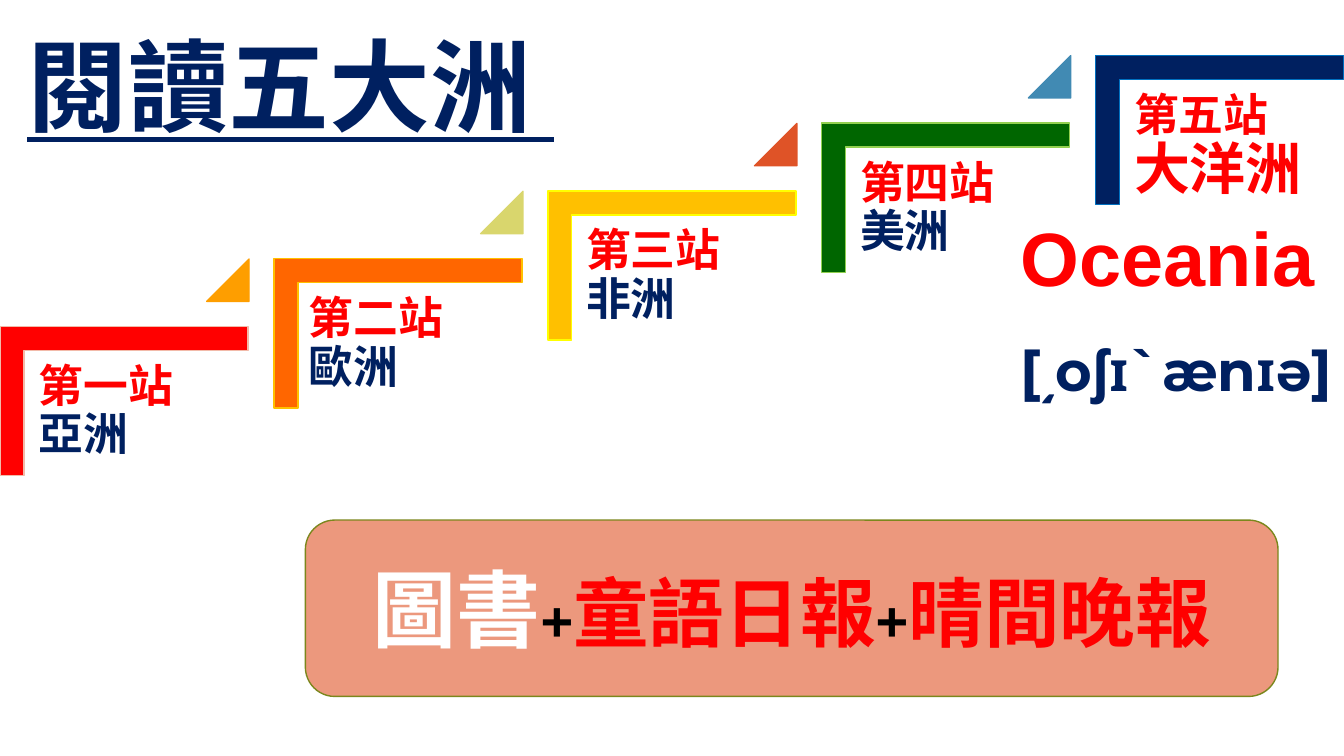
from dataclasses import dataclass

from lxml import etree
from pptx import Presentation
from pptx import util as u
from pptx.dml.color import RGBColor
from pptx.enum import shapes, text
from pptx.oxml import ns


@dataclass(frozen=True)
class Theme:
    navy: str = "002060"
    red: str = "FF0000"
    white: str = "FFFFFF"
    black: str = "000000"
    banner: str = "EC987D"
    banner_line: str = "7B871D"
    cjk: str = "Noto Sans CJK SC"
    latin: str = "Arial"
    phonetic: str = "Montserrat"
    title: int = 72
    banner_lead: int = 60
    headline: int = 54
    large: int = 40
    label: int = 32


@dataclass(frozen=True)
class Box:
    """A frame in percent of the slide's width and height."""
    left: float
    top: float
    width: float
    height: float

    def moved(self, across: float, down: float) -> "Box":
        return Box(self.left + across, self.top + down, self.width, self.height)

    def frame(self) -> tuple[int, int, int, int]:
        return (int(WIDTH * self.left / 100), int(HEIGHT * self.top / 100),
                int(WIDTH * self.width / 100), int(HEIGHT * self.height / 100))


@dataclass(frozen=True)
class Piece:
    words: str
    size: int
    color: str
    font: str
    underline: bool = False


@dataclass(frozen=True)
class Station:
    number: str
    continent: str
    fill: str
    line: str
    flag: str | None
    size: int
    color: str
    nudge: float = 0


THEME = Theme()
WIDTH, HEIGHT = u.Inches(13.33), u.Inches(7.5)

# Staircase: the first step's frames and the move to each next step
STEP_ACROSS, STEP_DOWN = 20.38, -8.97
CORNER = Box(3.68, 36.67, 11.1, 32.8)
LABEL = Box(1.88, 46.4, 16.65, 25.87)
FLAG = Box(15.38, 34.27, 3.15, 5.6)
CORNER_THICKNESS = 0.16

TITLE = Box(1.28, 4.4, 40.95, 21.2)
BANNER = Box(22.72, 68.8, 72.37, 23.33)
OCEANIA = Box(75.22, 30.27, 24.82, 22.93)

STATIONS = [
    Station("第一站", "亞洲", "FF0000", "F2BAA9", "FE9E00", THEME.label, THEME.navy),
    Station("第二站", "歐洲", "FF6600", "FFC000", "D9D66D", THEME.label, THEME.navy, -0.28),
    Station("第三站", "非洲", "FFC000", "FFFF00", "DF5327", THEME.label, THEME.navy),
    Station("第四站", "美洲", "006600", "92D050", "418AB3", THEME.label, THEME.navy),
    Station("第五站", "大洋洲", "002060", "0070C0", None, THEME.large, THEME.red),
]


def add_piece(paragraph, piece: Piece) -> None:
    run = paragraph.add_run()
    run.text = piece.words
    font = run.font
    font.size, font.bold, font.name = u.Pt(piece.size), True, piece.font
    font.color.rgb = RGBColor.from_string(piece.color)
    if piece.underline:
        font.underline = True
    latin = run._r.get_or_add_rPr().find(ns.qn("a:latin"))
    east_asian = etree.Element(ns.qn("a:ea"), typeface=THEME.cjk)
    latin.addnext(east_asian)


def add_preset(slide, kind, box: Box, fill: str, line: str):
    shape = slide.shapes.add_shape(kind, *box.frame())
    shape.shadow.inherit = False
    shape.fill.solid()
    shape.fill.fore_color.rgb = RGBColor.from_string(fill)
    shape.line.color.rgb = RGBColor.from_string(line)
    shape.line.width = u.Pt(1)
    return shape


def add_text_box(slide, box: Box):
    frame = slide.shapes.add_textbox(*box.frame()).text_frame
    frame.word_wrap = True
    return frame


def add_station(slide, index: int, station: Station) -> None:
    move = (STEP_ACROSS * index, STEP_DOWN * index)
    corner = add_preset(slide, shapes.MSO_SHAPE.CORNER, CORNER.moved(*move),
                        station.fill, station.line)
    corner.rotation = 90
    corner.adjustments[0] = corner.adjustments[1] = CORNER_THICKNESS

    frame = add_text_box(slide, LABEL.moved(move[0] + station.nudge, move[1]))
    frame.margin_left = frame.margin_right = u.Inches(0.13)
    frame.margin_top = frame.margin_bottom = u.Inches(0.13)
    paragraph = frame.paragraphs[0]
    paragraph.line_spacing = 0.9
    add_piece(paragraph, Piece(station.number, THEME.label, THEME.red, THEME.cjk))
    paragraph.add_line_break()
    add_piece(paragraph, Piece(station.continent, station.size, station.color, THEME.cjk))

    if station.flag:
        flag = add_preset(slide, shapes.MSO_SHAPE.ISOSCELES_TRIANGLE, FLAG.moved(*move),
                          station.flag, station.flag)
        flag.adjustments[0] = 1


def add_title(slide) -> None:
    title = slide.shapes.title
    title.left, title.top, title.width, title.height = TITLE.frame()
    frame = title.text_frame
    frame.auto_size = text.MSO_AUTO_SIZE.NONE
    frame.vertical_anchor = text.MSO_ANCHOR.BOTTOM
    frame.margin_bottom = u.Inches(0.49)
    paragraph = frame.paragraphs[0]
    paragraph.alignment = text.PP_ALIGN.LEFT
    paragraph.line_spacing = 0.8
    add_piece(paragraph, Piece("閱讀五大洲 ", THEME.title, THEME.navy, THEME.cjk, True))


def add_banner(slide) -> None:
    banner = add_preset(slide, shapes.MSO_SHAPE.ROUNDED_RECTANGLE, BANNER,
                        THEME.banner, THEME.banner_line)
    banner.text_frame.vertical_anchor = text.MSO_ANCHOR.MIDDLE
    paragraph = banner.text_frame.paragraphs[0]
    paragraph.alignment = text.PP_ALIGN.CENTER
    add_piece(paragraph, Piece("圖書", THEME.banner_lead, THEME.white, THEME.latin))
    for newspaper in ("童語日報", "晴間晚報"):
        add_piece(paragraph, Piece("+", THEME.large, THEME.black, THEME.latin))
        add_piece(paragraph, Piece(newspaper, THEME.headline, THEME.red, THEME.latin))


def add_oceania(slide) -> None:
    frame = add_text_box(slide, OCEANIA)
    frame.vertical_anchor = text.MSO_ANCHOR.BOTTOM
    frame.margin_bottom = 0
    name = frame.paragraphs[0]
    sound = frame.add_paragraph()
    name.line_spacing = sound.line_spacing = 0.8
    sound.space_before = u.Pt(34)
    add_piece(name, Piece("Oceania", THEME.headline, THEME.red, THEME.latin))
    add_piece(sound, Piece("[͵oʃɪˋænɪə]", THEME.large, THEME.navy, THEME.phonetic))


def main() -> None:
    presentation = Presentation()
    presentation.slide_width, presentation.slide_height = WIDTH, HEIGHT
    slide = presentation.slides.add_slide(presentation.slide_layouts[5])
    for index, station in enumerate(STATIONS):
        add_station(slide, index, station)
    add_title(slide)
    add_banner(slide)
    add_oceania(slide)
    presentation.save("out.pptx")


if __name__ == "__main__":
    main()
